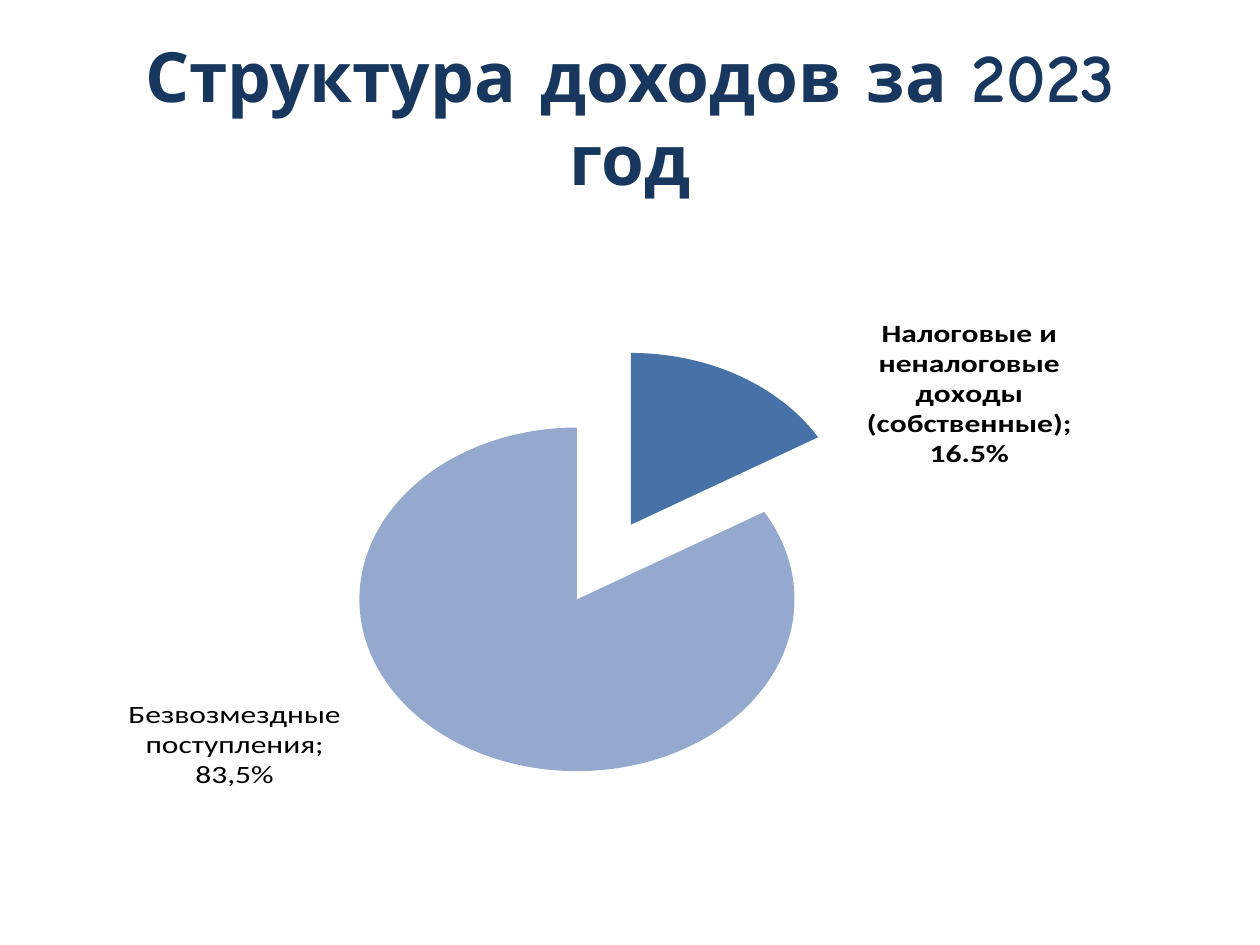
import pptx
import pptx.chart.data
import pptx.dml.color
import pptx.enum.chart
import pptx.enum.text
import pptx.oxml
import pptx.oxml.ns
import pptx.util

PX = 914400 / 126
CHART_NS = pptx.oxml.ns.nsdecls("c")
CHART_WIDTH, CHART_HEIGHT = 1134, 624


def px(length):
    return pptx.util.Emu(round(length * PX))


def color(hex_string):
    return pptx.dml.color.RGBColor.from_string(hex_string)


presentation = pptx.Presentation()
presentation.slide_width, presentation.slide_height = px(1260), px(945)
slide = presentation.slides.add_slide(presentation.slide_layouts[5])

# Title
heading = slide.shapes.title
heading.left, heading.top, heading.width, heading.height = px(63), px(38), px(1134), px(157)
heading.text_frame.text = "Структура доходов за 2023 год"
heading.text_frame.word_wrap = True
heading.text_frame.vertical_anchor = pptx.enum.text.MSO_ANCHOR.MIDDLE
heading_line = heading.text_frame.paragraphs[0]
heading_line.alignment = pptx.enum.text.PP_ALIGN.CENTER
heading_font = heading_line.runs[0].font
heading_font.name = "Comic Neue"
heading_font.size = pptx.util.Pt(39.6)
heading_font.bold = True
heading_font.color.rgb = color("17375E")

# Income pie
income_data = pptx.chart.data.CategoryChartData(number_format="0.0%")
income_data.categories = ["Налоговые и неналоговые доходы (собственные)",
                          "Безвозмездные поступления"]
income_data.add_series("Series 1", [0.165, 0.835])
income = slide.shapes.add_chart(pptx.enum.chart.XL_CHART_TYPE.PIE, px(63), px(220),
                                px(CHART_WIDTH), px(CHART_HEIGHT), income_data).chart
income.has_title = False
income.has_legend = False
income.font.name = "Calibri"
income.font.size = pptx.util.Pt(18)
income.font.color.rgb = color("000000")

# Plot position: a square of 544 px inside the chart
plot_area = income.plots[0]._element.getparent()
for old_layout in plot_area.findall(pptx.oxml.ns.qn("c:layout")):
    plot_area.remove(old_layout)
plot_area.insert(0, pptx.oxml.parse_xml(
    f'<c:layout {CHART_NS}><c:manualLayout><c:layoutTarget val="inner"/>'
    '<c:xMode val="edge"/><c:yMode val="edge"/>'
    f'<c:x val="{269 / CHART_WIDTH}"/><c:y val="{44 / CHART_HEIGHT}"/>'
    f'<c:w val="{544 / CHART_WIDTH}"/><c:h val="{544 / CHART_HEIGHT}"/>'
    '</c:manualLayout></c:layout>'))

# Exploded slices
shares = income.plots[0].series[0]
shares._element.find(pptx.oxml.ns.qn("c:tx")).addnext(
    pptx.oxml.parse_xml(f'<c:explosion {CHART_NS} val="25"/>'))
for index, slice_color in enumerate(["4672A8", "95A9CF"]):
    slice_fill = shares.points[index].format.fill
    slice_fill.solid()
    slice_fill.fore_color.rgb = color(slice_color)

# Labels: own income shows category and value, transfers have their own text
own_label = shares.points[0].data_label
transfers_label = shares.points[1].data_label
transfers_label.text_frame.text = "Безвозмездные поступления; 83,5%"
transfers_font = transfers_label.text_frame.paragraphs[0].runs[0].font
for label_font, bold in ((own_label.font, True), (transfers_font, False)):
    label_font.bold = bold
    label_font.size = pptx.util.Pt(18)
    label_font.name = "Calibri"
    label_font.color.rgb = color("000000")

for label in (own_label, transfers_label):
    label.position = pptx.enum.chart.XL_LABEL_POSITION.OUTSIDE_END

label_shifts = [(0.11, 0.2), (-0.11, -0.11)]
for label, (shift_x, shift_y) in zip(shares._element.iter(pptx.oxml.ns.qn("c:dLbl")), label_shifts):
    label.find(pptx.oxml.ns.qn("c:idx")).addnext(pptx.oxml.parse_xml(
        f'<c:layout {CHART_NS}><c:manualLayout><c:x val="{shift_x}"/>'
        f'<c:y val="{shift_y}"/></c:manualLayout></c:layout>'))
    label.find(pptx.oxml.ns.qn("c:showCatName")).set("val", "1")
    label.append(pptx.oxml.parse_xml(f'<c:separator {CHART_NS}>; </c:separator>'))
    text_format = label.find(pptx.oxml.ns.qn("c:txPr"))
    if text_format is not None:
        number_format = pptx.oxml.parse_xml(
            f'<c:numFmt {CHART_NS} formatCode="0.0%" sourceLinked="0"/>')
        shape_format = label.find(pptx.oxml.ns.qn("c:spPr"))
        (text_format if shape_format is None else shape_format).addprevious(number_format)

# No leader lines
for leader_switch in shares._element.iter(pptx.oxml.ns.qn("c:showLeaderLines")):
    leader_switch.set("val", "0")

presentation.save("out.pptx")
